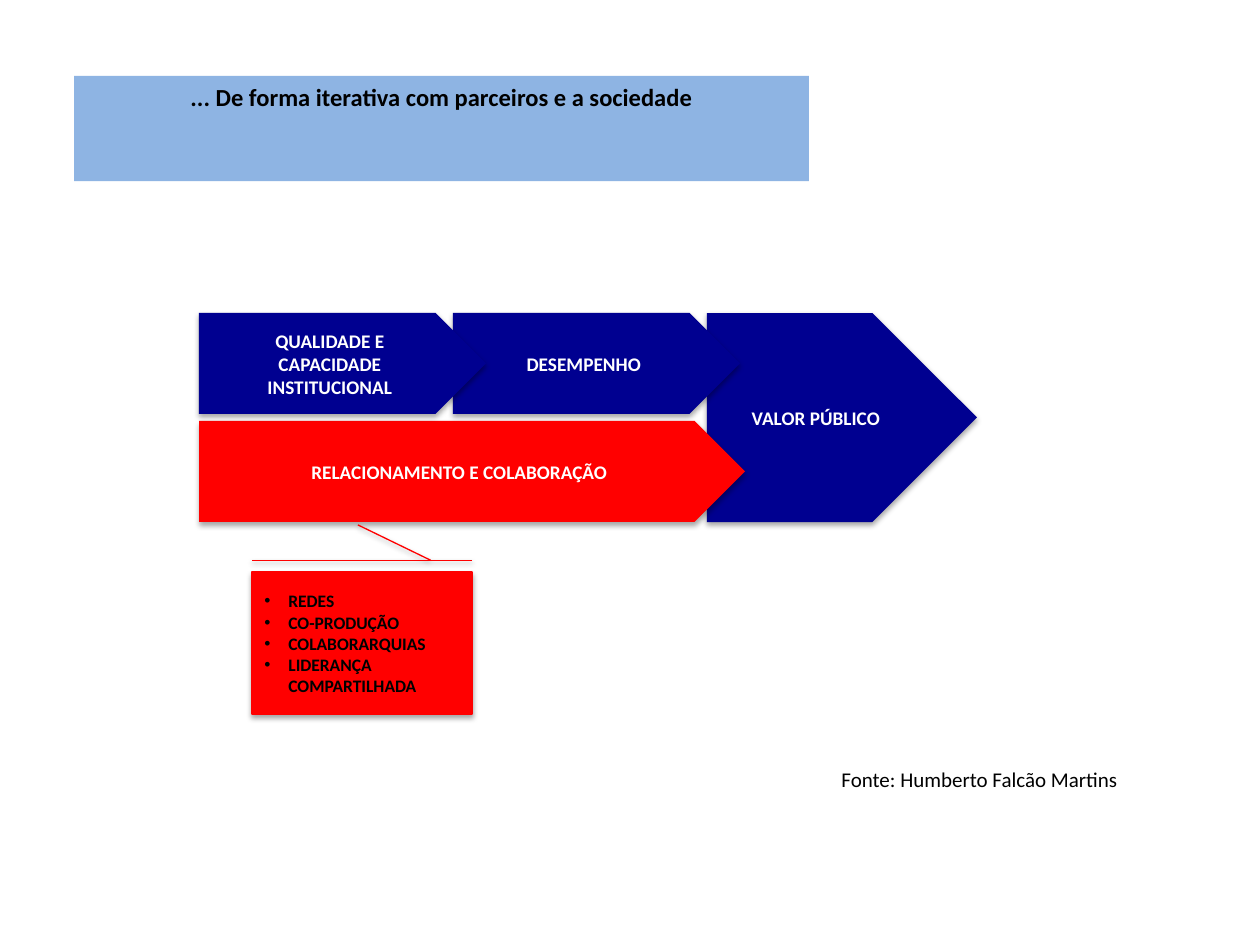
from dataclasses import dataclass

from lxml.etree import SubElement
from pptx import Presentation
from pptx.dml.color import RGBColor as RGB
from pptx.enum.shapes import MSO_SHAPE as SHAPE
from pptx.enum.text import MSO_ANCHOR as ANCHOR, MSO_AUTO_SIZE as FIT, PP_ALIGN as ALIGN
from pptx.oxml.ns import qn
from pptx.util import Emu, Pt


@dataclass(frozen=True)
class Theme:
    """Colours, font and type sizes of the slide."""
    font: str = "Calibri"
    navy: RGB = RGB(0x00, 0x00, 0x90)
    red: RGB = RGB(0xFF, 0x00, 0x00)
    sky: RGB = RGB(0x8E, 0xB4, 0xE3)
    black: RGB = RGB(0x00, 0x00, 0x00)
    white: RGB = RGB(0xFF, 0xFF, 0xFF)
    title: int = 14
    source: int = 12
    arrow: int = 11
    bullet: int = 10


THEME = Theme()
PX_PER_INCH = 126


def px(n):
    """Turn pixels into EMU."""
    return Emu(round(n * 914400 / PX_PER_INCH))


def place(s, box):
    """Move a shape to a box of left, top, width and height."""
    s.left, s.top, s.width, s.height = map(px, box)


def write(tf, lines, size, color, bold=True, align=ALIGN.CENTER, bullet=False):
    """Write one paragraph for each line, with bullets on request."""
    for i, line in enumerate(lines):
        p = tf.paragraphs[0] if i == 0 else tf.add_paragraph()
        p.alignment = align
        if bullet:
            pPr = p._p.get_or_add_pPr()
            pPr.set("marL", str(px(24)))
            pPr.set("indent", str(-px(24)))
            SubElement(pPr, qn("a:buFont"), typeface="Arial")
            SubElement(pPr, qn("a:buChar"), char="•")
        r = p.add_run()
        r.text = line
        r.font.name, r.font.size, r.font.bold = THEME.font, Pt(size), bold
        r.font.color.rgb = color


def add_shadowed(slide, kind, box, fill):
    """Add a filled preset shape with a soft shadow below it."""
    s = slide.shapes.add_shape(kind, *map(px, box))
    s.fill.solid()
    s.fill.fore_color.rgb = fill
    s.line.fill.background()
    s.shadow.inherit = False
    effects = s._element.spPr.find(qn("a:effectLst"))
    shadow = SubElement(effects, qn("a:outerShdw"), blurRad="40000", dist="23000",
                        dir="5400000", rotWithShape="0")
    black = SubElement(shadow, qn("a:srgbClr"), val=str(THEME.black))
    SubElement(black, qn("a:alpha"), val="35000")
    s.text_frame.vertical_anchor = ANCHOR.MIDDLE
    return s


def add_title(slide, box):
    """Turn the title placeholder into a coloured band."""
    s = slide.shapes.title
    place(s, box)
    s.fill.solid()
    s.fill.fore_color.rgb = THEME.sky
    tf = s.text_frame
    tf.auto_size, tf.vertical_anchor = FIT.SHAPE_TO_FIT_TEXT, ANCHOR.TOP
    write(tf, ["... De forma iterativa com parceiros e a sociedade"], THEME.title, THEME.black)


def add_value_chain(slide, box):
    """Draw the arrows that lead to public value."""
    x, y, w, h = box
    pitch, overlap, gap = 254, 33, 7
    row = (h - gap) // 2
    arrows = [
        (["VALOR PÚBLICO"], (x + 2 * pitch, y, w - 2 * pitch, h), THEME.navy),
        (["DESEMPENHO"], (x + pitch, y, pitch + overlap, row), THEME.navy),
        (["RELACIONAMENTO E COLABORAÇÃO"],
         (x, y + row + gap, 2 * pitch + overlap + 5, row), THEME.red),
        (["QUALIDADE E", "CAPACIDADE", "INSTITUCIONAL"],
         (x, y, pitch + overlap, row), THEME.navy),
    ]
    for lines, arrow_box, fill in arrows:
        s = add_shadowed(slide, SHAPE.PENTAGON, arrow_box, fill)
        s.text_frame.word_wrap = False
        write(s.text_frame, lines, THEME.arrow, THEME.white)


def add_callout(slide, box):
    """Draw the list callout, turned so that its leader points up."""
    x, y, w, h = box
    turned = (x + (w - h) / 2, y + (h - w) / 2, h, w)
    s = add_shadowed(slide, SHAPE.LINE_CALLOUT_1_BORDER_AND_ACCENT_BAR, turned, THEME.red)
    s.rotation = 90
    for i, value in enumerate((0.188, -0.083, 0.519, -0.332)):
        s.adjustments[i] = value
    s.line.color.rgb, s.line.width = THEME.red, Pt(0.75)
    tf = s.text_frame
    tf.word_wrap = True
    tf._txBody.bodyPr.set("vert", "vert270")
    write(tf, ["REDES", "CO-PRODUÇÃO", "COLABORARQUIAS", "LIDERANÇA COMPARTILHADA"],
          THEME.bullet, THEME.black, align=ALIGN.LEFT, bullet=True)


def add_source(slide, box):
    """Credit the author at the lower right."""
    tf = slide.shapes.add_textbox(*map(px, box)).text_frame
    tf.word_wrap, tf.auto_size = False, FIT.SHAPE_TO_FIT_TEXT
    write(tf, ["Fonte: Humberto Falcão Martins"], THEME.source, THEME.black,
          bold=False, align=ALIGN.RIGHT)


def main():
    """Build the slide and save it."""
    prs = Presentation()
    prs.slide_width, prs.slide_height = px(1260), px(945)
    slide = prs.slides.add_slide(prs.slide_layouts.get_by_name("Title Only"))
    add_title(slide, (74, 76, 735, 42))
    add_value_chain(slide, (199, 313, 778, 209))
    add_callout(slide, (252, 572, 220, 142))
    add_source(slide, (825, 760, 305, 38))
    prs.save("out.pptx")


if __name__ == "__main__":
    main()
